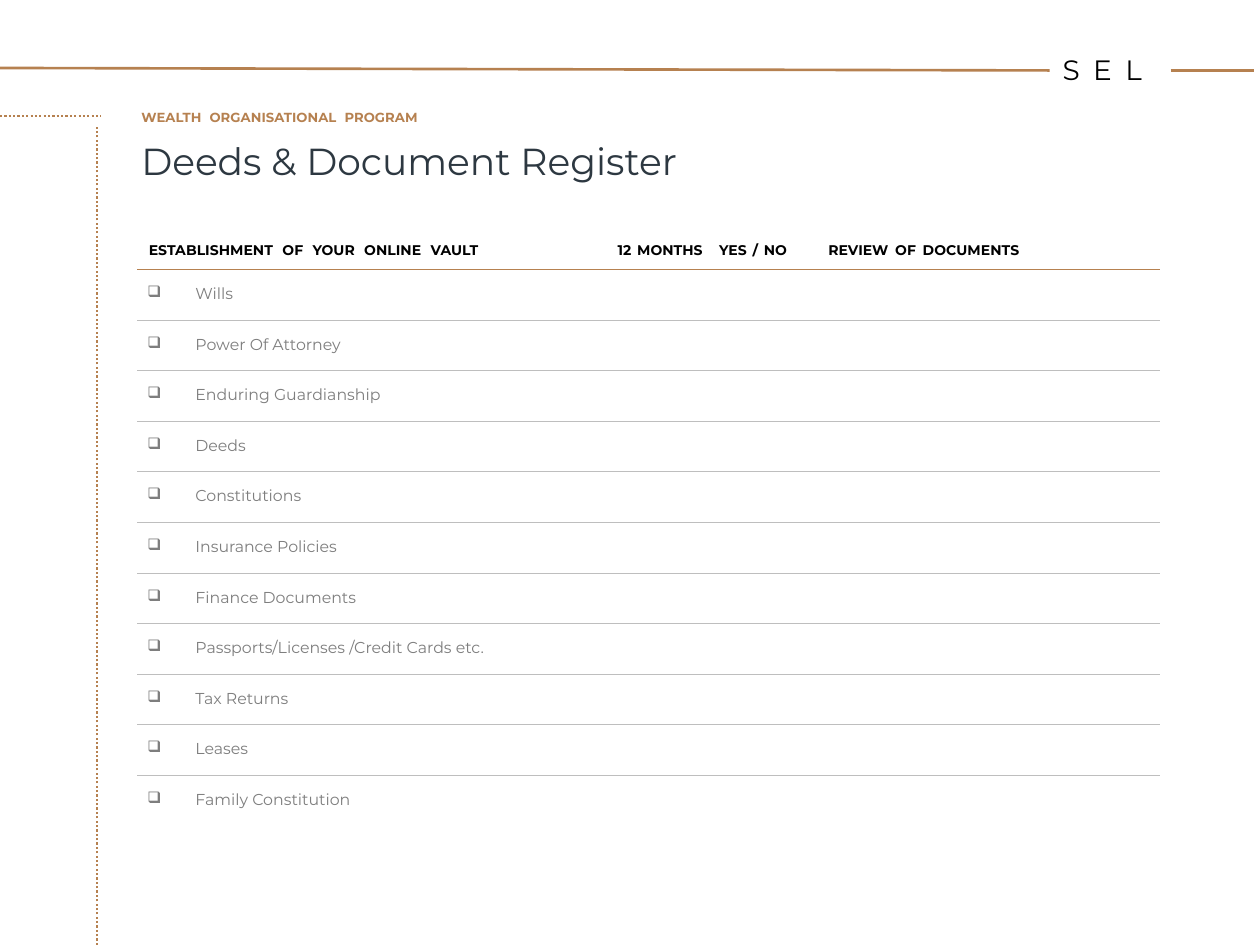
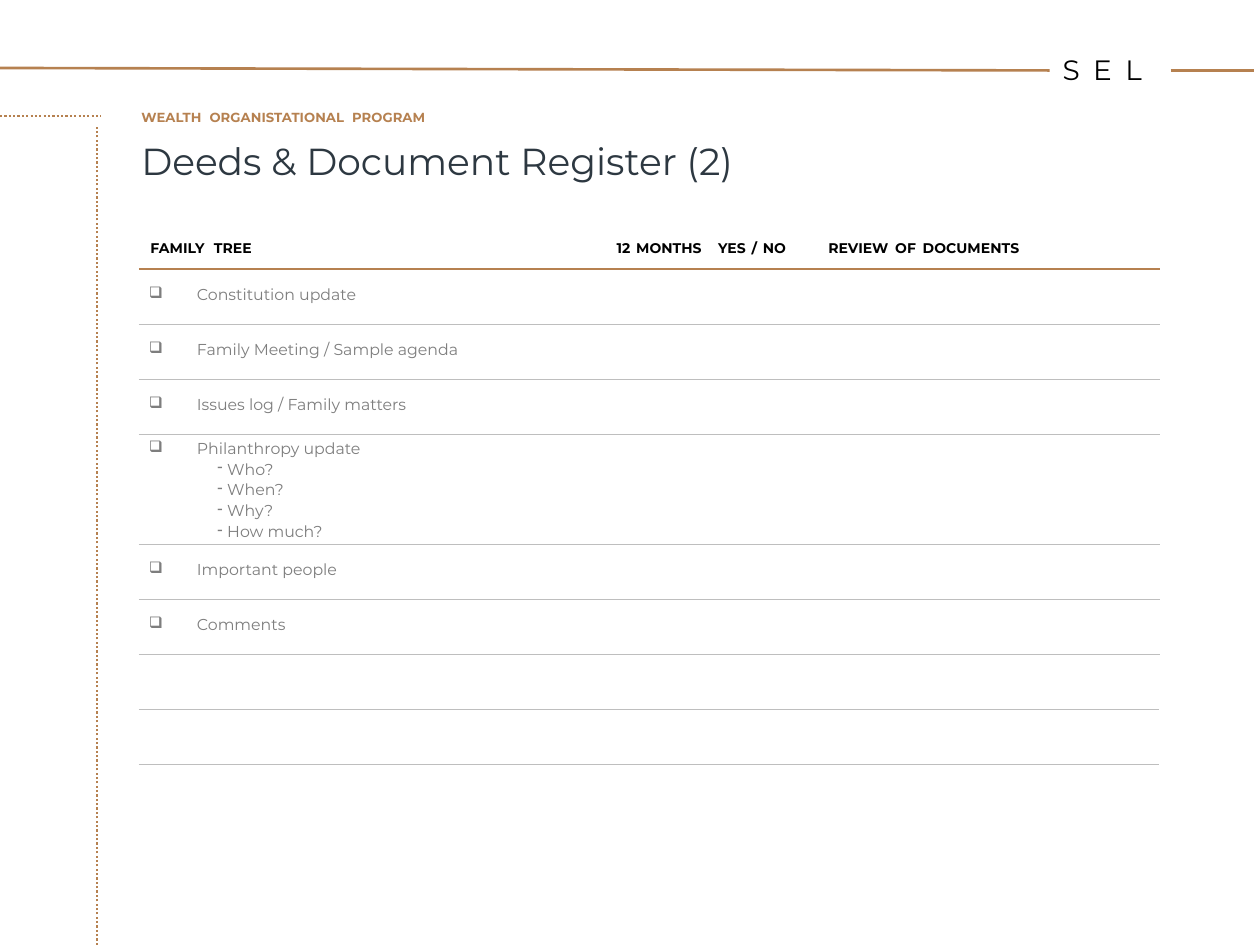
from itertools import chain, repeat

from lxml import etree
from pptx import Presentation
from pptx import util as u
from pptx.dml.color import RGBColor
from pptx.enum import dml, shapes
from pptx.oxml.ns import qn

Cm, Pt = u.Cm, u.Pt
HUES = {"gold": "B68150", "ink": "2D3841", "black": "000000",
        "grey": "7E7E7E", "rule": "BEBEBE"}
STYLES = {
    "brand": {"size": Pt(16), "bold": False, "hue": "black"},
    "title": {"size": Pt(21.5), "bold": False, "hue": "ink"},
    "kicker": {"size": Pt(7.5), "bold": True, "hue": "gold"},
    "head": {"size": Pt(8), "bold": True, "hue": "black"},
    "item": {"size": Pt(9), "bold": False, "hue": "grey"},
}


def put(par, words, style, gaps=()):
    """Write words in a style; gaps are points added to each space in turn."""
    parts = [(words, 0)]
    if gaps:
        parts = []
        split = words.split(" ")
        for word, gap in zip(split, chain(gaps, repeat(gaps[-1]))):
            parts += [(word, 0), (" ", gap)]
        parts.pop()
    for part, gap in parts:
        run = par.add_run()
        run.text = part
        look = {"name": "Montserrat", **STYLES[style]}
        run.font.color.rgb = RGBColor.from_string(HUES[look.pop("hue")])
        for key, value in look.items():
            setattr(run.font, key, value)
        if gap:
            run._r.get_or_add_rPr().set("spc", str(int(gap * 100)))


def dent(par, left, hang=0, mark=None):
    """Indent a paragraph in cm, with a hanging bullet if a mark is given."""
    props = par._p.get_or_add_pPr()
    props.set("marL", str(Cm(left)))
    props.set("indent", str(Cm(-hang)))
    if mark:
        etree.SubElement(props, qn("a:buChar")).set("char", mark)


# Lines on every slide: x1, y1, x2, y2 in cm, hue, width, dash
DOTS = dml.MSO_LINE.ROUND_DOT
FRAME = [
    (0, 2.34, 2.03, 2.34, "gold", 1.25, DOTS),
    (1.96, 19.05, 1.96, 2.51, "gold", 1.25, DOTS),
    (0, 1.37, 21.16, 1.42, "gold", 1.5, None),
    (23.6, 1.42, 25.27, 1.42, "gold", 1.5, None),
]
MONTHS = ("12 MONTHS YES / NO", [1, 7, 1])
REVIEW = ("REVIEW OF DOCUMENTS", [1.5])

# Each row: item, its sub-items
PAGES = [
    {
        "kicker": "WEALTH ORGANISATIONAL PROGRAM",
        "title": "Deeds & Document Register",
        "head": ("ESTABLISHMENT OF YOUR ONLINE VAULT", [3]),
        "at": (2.77, 4.9), "cols": (8.36, 5.21, 7.04), "dents": (0.23, 1.32, 0.36),
        "top": 0.53, "step": 1.02, "pad": 0.3, "merge": False, "last": 0.71,
        "rows": [(name, []) for name in (
            "Wills", "Power Of Attorney", "Enduring Guardianship", "Deeds",
            "Constitutions", "Insurance Policies", "Finance Documents",
            "Passports/Licenses /Credit Cards etc.", "Tax Returns", "Leases",
            "Family Constitution")],
        "lines": [],
    },
    {
        "kicker": "WEALTH ORGANISTATIONAL PROGRAM",
        "title": "Deeds & Document Register (2)",
        "head": ("FAMILY TREE", [3]),
        "at": (2.8, 4.86), "cols": (6, 7.54, 7.04), "dents": (0.23, 3.63, 0.36),
        "top": 0.56, "step": 1.11, "pad": 0.33, "merge": True, "last": 1.11,
        "rows": [
            ("Constitution update", []),
            ("Family Meeting / Sample agenda", []),
            ("Issues log / Family matters", []),
            ("Philanthropy update", ["Who?", "When?", "Why?", "How much?"]),
            ("Important people", []),
            ("Comments", [])],
        "lines": [(2.8, y, 23.37, y, "rule", 0.5, None) for y in (14.3, 15.42)],
    },
]

deck = Presentation()
deck.slide_width, deck.slide_height = Cm(25.4), Cm(19.05)

for page in PAGES:
    slide = deck.slides.add_slide(deck.slide_layouts[6])

    for x1, y1, x2, y2, hue, width, dash in FRAME + page["lines"]:
        line = slide.shapes.add_connector(
            shapes.MSO_CONNECTOR.STRAIGHT, Cm(x1), Cm(y1), Cm(x2), Cm(y2))
        line.line.color.rgb = RGBColor.from_string(HUES[hue])
        line.line.width = Pt(width)
        if dash:
            line.line.dash_style = dash
        etree.SubElement(line._element.spPr, qn("a:effectLst"))

    for words, style, gaps, x, y, w, h, pad in (
            ("S E L", "brand", [3.5], 21.39, 1.02, 2.2, 0.74, 0.03),
            (page["title"], "title", (), 2.82, 2.74, 18, 1, 0.05),
            (page["kicker"], "kicker", [2.5], 2.82, 2.18, 10, 0.38, 0.03)):
        frame = slide.shapes.add_textbox(Cm(x), Cm(y), Cm(w), Cm(h)).text_frame
        for key, value in {"word_wrap": True, "margin_left": 0, "margin_right": 0,
                           "margin_top": Cm(pad), "margin_bottom": 0}.items():
            setattr(frame, key, value)
        dent(frame.paragraphs[0], 0.03)
        put(frame.paragraphs[0], words, style, gaps)

    # Register table
    rows, cols = page["rows"], page["cols"]
    tall = [page["top"]] + [page["step"] * (2 if subs else 1) for _, subs in rows]
    tall[-1] = page["last"]
    grid = slide.shapes.add_table(
        len(tall), len(cols), *map(Cm, page["at"]), Cm(sum(cols)), Cm(sum(tall))).table
    grid.first_row = grid.horz_banding = False
    for col, width in zip(grid.columns, cols):
        col.width = Cm(width)
    for row, height in zip(grid.rows, tall):
        row.height = Cm(height)

    end = len(rows)
    for r in range(end + 1):
        above = {0: None, 1: ("gold", 1)}.get(r, ("rule", 0.5))
        below = ("gold", 1) if r == 0 else ("rule", 0.5)
        if r == end and not page["merge"]:
            below = None
        for c in range(len(cols)):
            cell = grid.cell(r, c)
            for side in ("left", "right", "top", "bottom"):
                setattr(cell, "margin_" + side, 0)
            props = cell._tc.get_or_add_tcPr()
            for side, edge in (("L", None), ("R", None), ("T", above), ("B", below)):
                rule = etree.SubElement(props, qn("a:ln" + side))
                if edge:
                    rule.set("w", str(Pt(edge[1])))
                    fill = etree.SubElement(rule, qn("a:solidFill"))
                    etree.SubElement(fill, qn("a:srgbClr")).set("val", HUES[edge[0]])
                else:
                    etree.SubElement(rule, qn("a:noFill"))
            cell.fill.background()

    for c, (words, gaps) in enumerate((page["head"], MONTHS, REVIEW)):
        par = grid.cell(0, c).text_frame.paragraphs[0]
        par.line_spacing = Pt(9.4)
        dent(par, page["dents"][c])
        put(par, words, "head", gaps)

    for r, (name, subs) in enumerate(rows, 1):
        cell = grid.cell(r, 0)
        if page["merge"]:
            cell.merge(grid.cell(r, 1))
        cell.margin_top = Cm(0.1 if subs else page["pad"])
        par = cell.text_frame.paragraphs[0]
        dent(par, 1.17, 0.97, "❑")
        put(par, name, "item")
        for sub in subs:
            par = cell.text_frame.add_paragraph()
            par.level = 1
            par.space_before = Pt(0.8)
            dent(par, 1.78, 0.2, "-")
            put(par, sub, "item")

deck.save("out.pptx")
